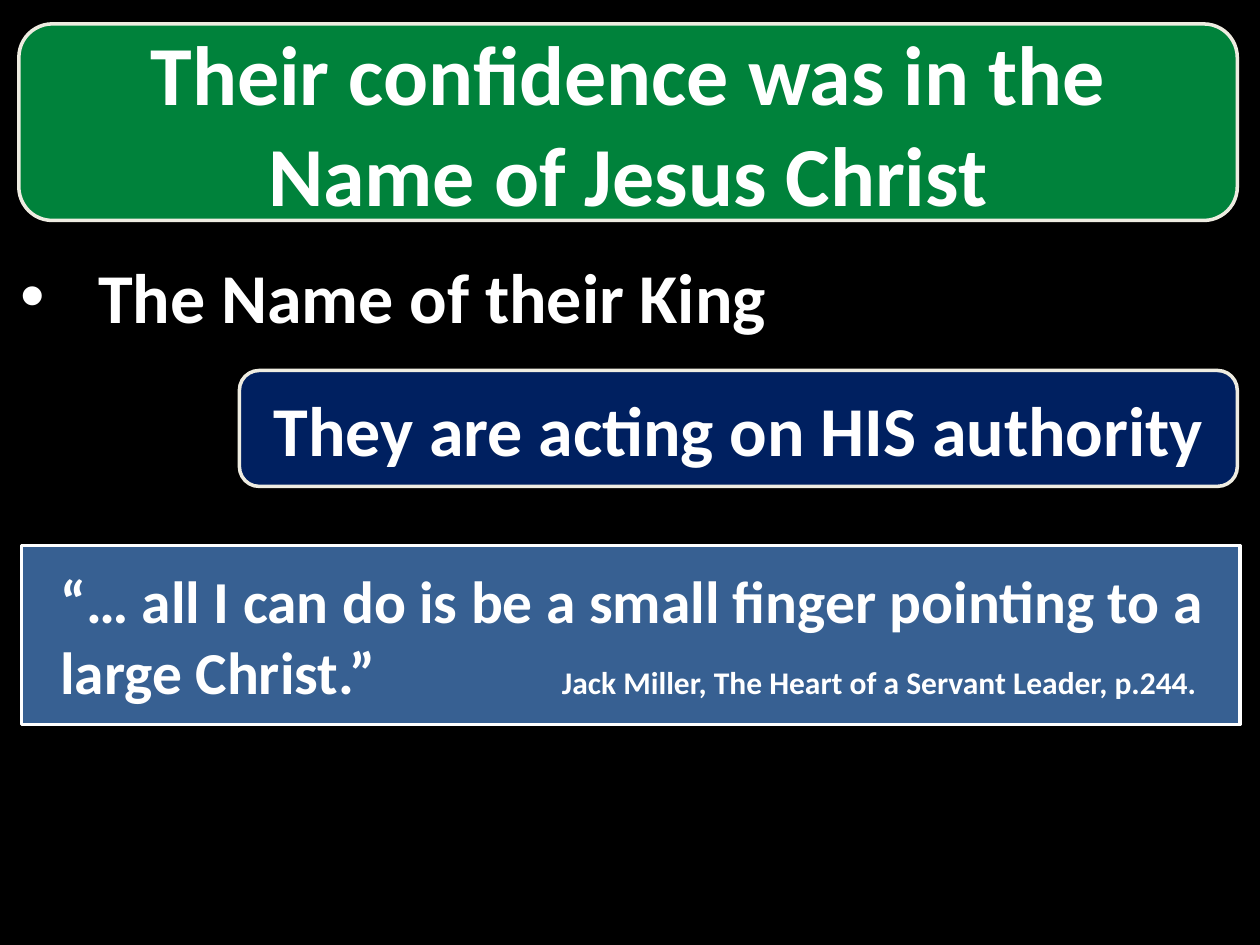
import pptx
import pptx.util
import pptx.dml.color
import pptx.enum.shapes
import pptx.enum.text
import pptx.oxml.ns
import lxml.etree

COLORS = {
    "black": "000000",
    "white": "FFFFFF",
    "cream": "EEECE1",
    "green": "00823B",
    "navy": "002060",
    "blue": "376092",
}
COLS, ROWS = 100, 75
CALLOUT = pptx.enum.shapes.MSO_SHAPE.ROUNDED_RECTANGULAR_CALLOUT
RECT = pptx.enum.shapes.MSO_SHAPE.RECTANGLE
ALIGN = pptx.enum.text.PP_ALIGN

prs = pptx.Presentation()
prs.slide_width = pptx.util.Inches(10)
prs.slide_height = pptx.util.Inches(7.5)


def rgb(name):
    return pptx.dml.color.RGBColor.from_string(COLORS[name])


def add_panel(s, kind, box, fill, line=None):
    col_w, row_h = prs.slide_width / COLS, prs.slide_height / ROWS
    x, y, w, h = box
    sp = s.shapes.add_shape(kind, int(x * col_w), int(y * row_h),
                            int(w * col_w), int(h * row_h))
    sp.shadow.inherit = False
    sp.fill.solid()
    sp.fill.fore_color.rgb = rgb(fill)
    if line:
        sp.line.color.rgb = rgb(line)
        sp.line.width = pptx.util.Pt(2)
    else:
        sp.line.fill.background()
    if kind == CALLOUT:
        for i, value in enumerate((-0.22, 0.5, 0.17)):
            sp.adjustments[i] = value
    tf = sp.text_frame
    tf.word_wrap = True
    tf.vertical_anchor = pptx.enum.text.MSO_ANCHOR.MIDDLE
    return tf


def add_run(p, text, size):
    r = p.add_run()
    r.text = text
    formats = {"name": "Calibri", "size": pptx.util.Pt(size), "bold": True}
    for key, value in formats.items():
        setattr(r.font, key, value)
    r.font.color.rgb = rgb("white")


def add_banner(s, box, text, size, fill):
    p = add_panel(s, CALLOUT, box, fill, "cream").paragraphs[0]
    p.alignment = ALIGN.CENTER
    add_run(p, text, size)


def add_bullet_point(s, box, text):
    p = add_panel(s, CALLOUT, box, "black").paragraphs[0]
    p.alignment = ALIGN.LEFT
    pPr = p._p.get_or_add_pPr()
    indent = pptx.util.Inches(0.62)
    pPr.set("marL", str(indent))
    pPr.set("indent", str(-indent))
    font = lxml.etree.SubElement(pPr, pptx.oxml.ns.qn("a:buFont"))
    font.set("typeface", "Arial")
    bullet = lxml.etree.SubElement(pPr, pptx.oxml.ns.qn("a:buChar"))
    bullet.set("char", "•")
    add_run(p, text, 40)


def add_quote(s, box, quote, source):
    tf = add_panel(s, RECT, box, "blue", "white")
    tf.margin_left = pptx.util.Inches(0.31)
    p = tf.paragraphs[0]
    p.alignment = ALIGN.LEFT
    tabs = lxml.etree.SubElement(p._p.get_or_add_pPr(), pptx.oxml.ns.qn("a:tabLst"))
    tab = lxml.etree.SubElement(tabs, pptx.oxml.ns.qn("a:tab"))
    tab.set("pos", str(pptx.util.Inches(9.02)))
    tab.set("algn", "r")
    add_run(p, quote, 34)
    add_run(p, "\t" + source, 18)


def main():
    s = prs.slides.add_slide(prs.slide_layouts[6])
    s.background.fill.solid()
    s.background.fill.fore_color.rgb = rgb("black")
    add_bullet_point(s, (0.2, 19.3, 100 - 0.2, 8.3), "The Name of their King")
    add_banner(s, (1.5, 1.9, 96.7, 15.6),
               "Their confidence was in the Name of Jesus Christ", 48, "green")
    add_banner(s, (19, 29.4, 79.2, 9.2),
               "They are acting on HIS authority", 40, "navy")
    add_quote(s, (1.7, 43.3, 96.7, 14.2),
              "“… all I can do is be a small finger pointing to a large Christ.”",
              "Jack Miller, The Heart of a Servant Leader, p.244.")
    prs.save("out.pptx")


if __name__ == "__main__":
    main()
